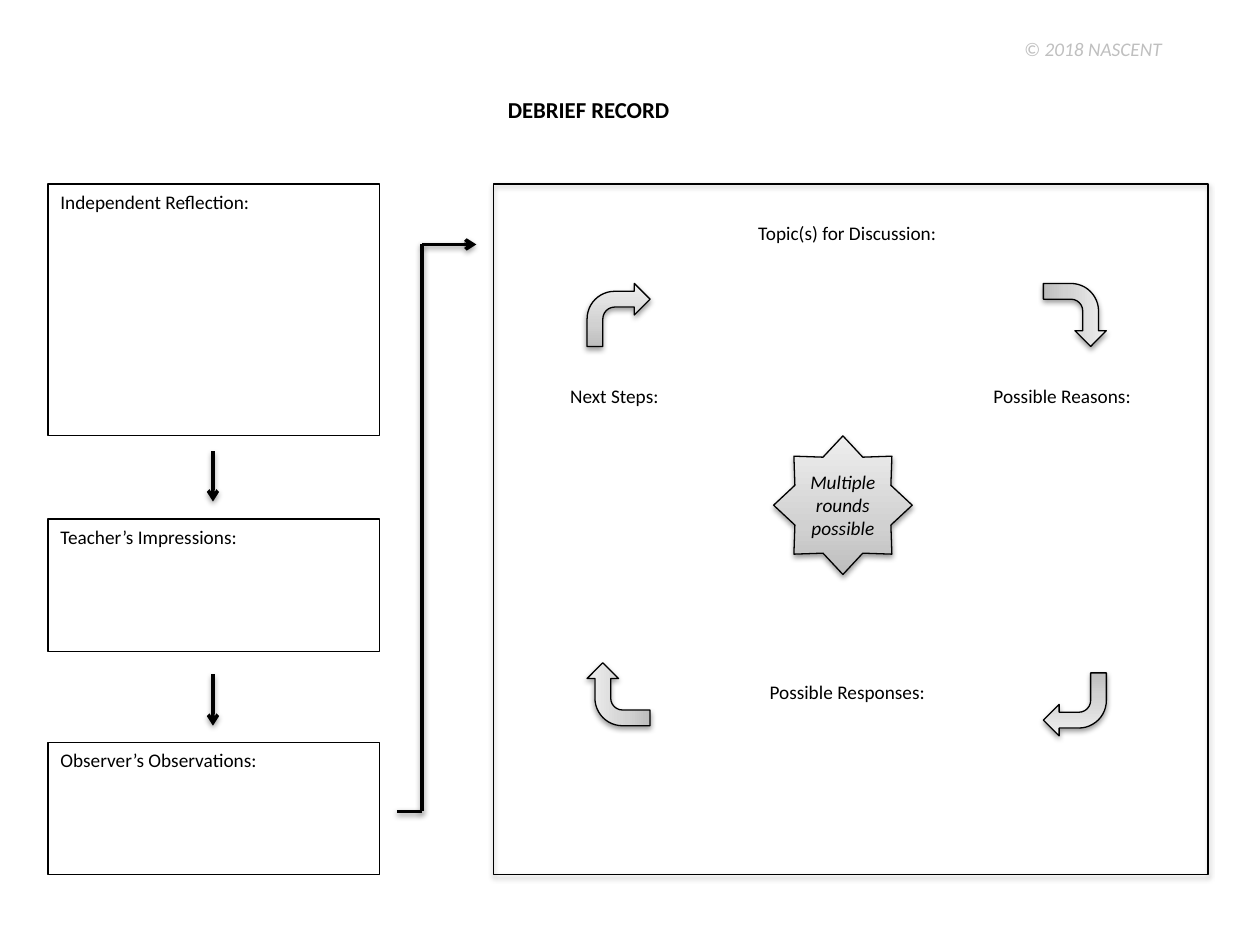
from dataclasses import dataclass
from typing import Optional

from lxml.etree import SubElement
from pptx import Presentation
from pptx.dml.color import RGBColor as Color
from pptx.enum.shapes import MSO_CONNECTOR as Conn, MSO_SHAPE as Kind
from pptx.enum.text import MSO_ANCHOR as Anchor, MSO_AUTO_SIZE as Fit, PP_ALIGN as Align
from pptx.oxml.ns import qn
from pptx.util import Pt

HUES = {"ink": "000000", "paper": "FFFFFF", "pale": "BFBFBF",
        "dark": "BDBDBD", "mid": "D1D1D1", "light": "EEEEEE"}
STOPS = {0: "dark", 35: "mid", 100: "light"}
FONT = {"name": "Calibri", "size": Pt(11), "bold": False, "italic": False}
SIDE, WIDE, TURN = 27.4, 189.4, 36


@dataclass
class Box:
    left: float
    top: float
    width: float
    height: float
    text: str = ""
    kind: Kind = Kind.RECTANGLE
    fill: Optional[str] = "paper"
    line: Optional[str] = "ink"
    align: Align = Align.CENTER
    anchor: Anchor = Anchor.TOP
    spin: int = 0
    shade: bool = False
    italic: bool = False


@dataclass
class Link:
    x1: float
    y1: float
    x2: float
    y2: float
    head: bool = True


def tint(name: str) -> Color:
    return Color.from_string(HUES[name])


def write(frame, text: str, hue: str = "ink", align: Align = Align.LEFT, **style) -> None:
    frame.text = text
    para = frame.paragraphs[0]
    para.alignment = align
    font = para.runs[0].font
    for key, value in {**FONT, **style}.items():
        setattr(font, key, value)
    font.color.rgb = tint(hue)


def cast(props) -> None:
    """Add a soft shadow below the shape that owns these properties."""
    list_ = props.find(qn("a:effectLst"))
    if list_ is None:
        list_ = SubElement(props, qn("a:effectLst"))
    shadow = SubElement(list_, qn("a:outerShdw"), blurRad="40000", dist="20000",
                        dir="5400000", rotWithShape="0")
    hue = SubElement(shadow, qn("a:srgbClr"), val=HUES["ink"])
    SubElement(hue, qn("a:alpha"), val="38000")


def blend(shape) -> None:
    """Fill with the grey gradient, dark at the bottom."""
    shape.fill.gradient()
    shape.fill.gradient_angle = 90
    stops = shape.element.spPr.find(qn("a:gradFill")).find(qn("a:gsLst"))
    for old in list(stops):
        stops.remove(old)
    for spot, name in STOPS.items():
        stop = SubElement(stops, qn("a:gs"), pos=str(spot * 1000))
        SubElement(stop, qn("a:srgbClr"), val=HUES[name])


def draw_box(slide, box: Box) -> None:
    shape = slide.shapes.add_shape(
        box.kind, Pt(box.left), Pt(box.top), Pt(box.width), Pt(box.height))
    shape.rotation = box.spin
    if box.fill == "blend":
        blend(shape)
    elif box.fill:
        shape.fill.solid()
        shape.fill.fore_color.rgb = tint(box.fill)
    else:
        shape.fill.background()
    if box.line:
        shape.line.color.rgb = tint(box.line)
        shape.line.width = Pt(0.75)
    else:
        shape.line.fill.background()
    shape.shadow.inherit = False
    if box.shade:
        cast(shape.element.spPr)
    if box.text:
        shape.text_frame.word_wrap = True
        shape.text_frame.vertical_anchor = box.anchor
        write(shape.text_frame, box.text, align=box.align, italic=box.italic)


def draw_link(slide, link: Link) -> None:
    line = slide.shapes.add_connector(
        Conn.STRAIGHT, Pt(link.x1), Pt(link.y1), Pt(link.x2), Pt(link.y2))
    line.line.color.rgb = tint("ink")
    line.line.width = Pt(2)
    props = line._element.spPr
    if link.head:
        SubElement(props.find(qn("a:ln")), qn("a:tailEnd"), type="arrow")
    cast(props)


def place(shape, text: str, left: float, top: float, width: float, height: float,
          **style) -> None:
    """Set a one-line text at a spot."""
    shape.left, shape.top, shape.width, shape.height = map(Pt, (left, top, width, height))
    frame = shape.text_frame
    frame.word_wrap = False
    frame.auto_size = Fit.SHAPE_TO_FIT_TEXT
    frame.vertical_anchor = Anchor.TOP
    write(frame, text, **style)


NOTES = [Box(SIDE, top, WIDE, high, text, align=Align.LEFT) for top, high, text in (
    (105.1, 144, "Independent Reflection:"),
    (296.6, 75.6, "Teacher’s Impressions:"),
    (424.1, 75.6, "Observer’s Observations:"))]
FRAME = Box(282.2, 105.1, 408.2, 394.6, fill=None, shade=True)
LABELS = [
    Box(389.5, 123.1, WIDE, 75.6, "Topic(s) for Discussion:", line=None),
    Box(389.5, 385.2, WIDE, 92.9, "Possible Responses:", line="paper"),
    Box(545.8, 216, 122.4, 149, "Possible Reasons:", line="paper"),
    Box(301, 216, 100.1, 149, "Next Steps:", line="paper")]
TURNS = [Box(left, top, TURN, TURN, kind=Kind.BENT_ARROW, fill="blend", spin=spin, shade=True)
         for left, top, spin in ((596.2, 162, 90), (596.2, 384.5, 180),
                                 (335.5, 378.7, 270), (335.5, 162, 0))]
STAR = Box(442.1, 249.1, 79.2, 79.2, "Multiple rounds possible", Kind.STAR_8_POINT, "blend",
           anchor=Anchor.MIDDLE, shade=True, italic=True)
MID = SIDE + WIDE / 2 - 0.4
LINKS = [
    Link(MID, 257.8, MID, 286.6),
    Link(MID, 385.2, MID, 414.7),
    Link(226.8, 463.7, 241.2, 463.7, head=False),
    Link(241.2, 463.7, 241.2, 139.7, head=False),
    Link(241.2, 139.7, 272.2, 139.7)]


def main() -> None:
    deck = Presentation()
    deck.slide_width, deck.slide_height = Pt(720), Pt(540)
    slide = deck.slides.add_slide(deck.slide_layouts[5])
    place(slide.shapes.title, "DEBRIEF RECORD", 283, 51.1, 132.5, 23, size=Pt(13), bold=True)
    spot = (578.2, 18, 110.2, 20.9)
    mark = slide.shapes.add_textbox(*map(Pt, spot))
    place(mark, "© 2018 NASCENT", *spot, hue="pale", italic=True)
    for box in (*NOTES, FRAME):
        draw_box(slide, box)
    for link in LINKS:
        draw_link(slide, link)
    for box in (*LABELS, *TURNS, STAR):
        draw_box(slide, box)
    deck.save("out.pptx")


if __name__ == "__main__":
    main()
